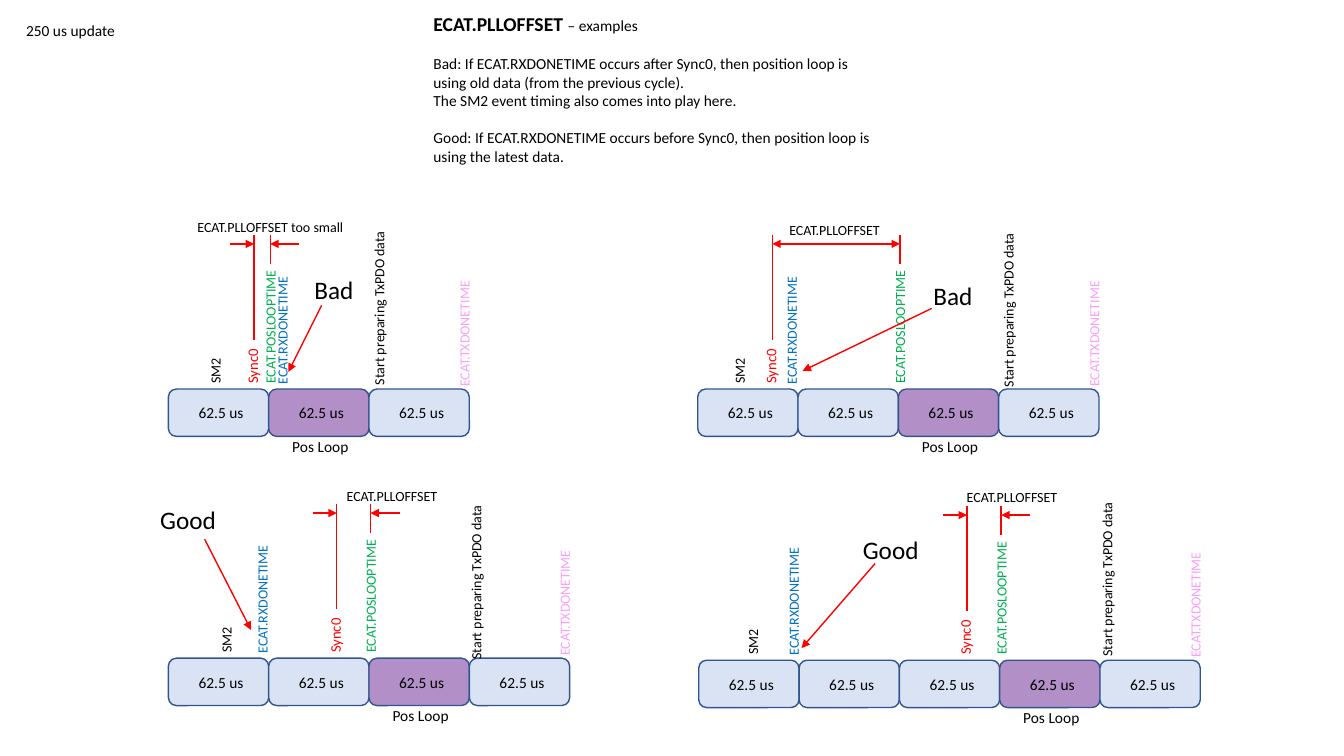
import pptx
import pptx.dml.color
import pptx.enum.shapes
import pptx.enum.text
import pptx.oxml.ns
import pptx.util
from lxml import etree

Inches = pptx.util.Inches
Points = pptx.util.Pt

FONT = "Calibri"
BLACK, RED, GREEN, BLUE, PINK = "000000", "FF0000", "00B050", "0070C0", "FAA0FA"
CELL_FILL, LOOP_FILL, CELL_LINE = "DAE3F3", "B28FC7", "325491"
PITCH, CELL_HEIGHT = 0.995, 0.47


def color(value):
    return pptx.dml.color.RGBColor.from_string(value)


def write(para, text, size=11, ink=BLACK, bold=False):
    span = para.add_run()
    span.text = text
    span.font.name = FONT
    span.font.size = Points(size)
    span.font.bold = bold
    span.font.color.rgb = color(ink)


class TimingPage:
    def __init__(self, deck):
        self.shapes = deck.slides.add_slide(deck.slide_layouts[6]).shapes

    def text_box(self, left, top, width, height):
        box = self.shapes.add_textbox(Inches(left), Inches(top), Inches(width), Inches(height))
        box.text_frame.word_wrap = True
        box.text_frame.auto_size = pptx.enum.text.MSO_AUTO_SIZE.SHAPE_TO_FIT_TEXT
        return box

    def label(self, text, left, top, width, height=0.27, **style):
        box = self.text_box(left, top, width, height)
        write(box.text_frame.paragraphs[0], text, **style)
        return box

    def upright_label(self, text, center_x, center_y, length, height=0.27, **style):
        """Place a label that reads from bottom to top around a centre."""
        left, top = center_x - length / 2, center_y - height / 2
        self.label(text, left, top, length, height, **style).rotation = 270

    def cell(self, left, top, fill):
        box = self.shapes.add_shape(pptx.enum.shapes.MSO_SHAPE.ROUNDED_RECTANGLE,
                                    Inches(left), Inches(top), Inches(PITCH), Inches(CELL_HEIGHT))
        box.shadow.inherit = False
        box.fill.solid()
        box.fill.fore_color.rgb = color(fill)
        box.line.color.rgb = color(CELL_LINE)
        box.line.width = Points(1)
        frame = box.text_frame
        frame.margin_left, frame.margin_right = Inches(0.05), Inches(0)
        frame.vertical_anchor = pptx.enum.text.MSO_ANCHOR.MIDDLE
        para = frame.paragraphs[0]
        para.alignment = pptx.enum.text.PP_ALIGN.CENTER
        write(para, "62.5 us")

    def line(self, start, end, heads=()):
        """Draw a red line; heads lists headEnd (at start) and tailEnd (at end)."""
        connector = self.shapes.add_connector(pptx.enum.shapes.MSO_CONNECTOR.STRAIGHT,
                                              *map(Inches, (*start, *end)))
        connector.line.color.rgb = color(RED)
        connector.line.width = Points(1)
        for head in heads:
            etree.SubElement(connector.line._get_or_add_ln(),
                             pptx.oxml.ns.qn("a:" + head), type="triangle")
        etree.SubElement(connector._element.spPr, pptx.oxml.ns.qn("a:effectLst"))

    def arrow(self, start, end):
        self.line(start, end, ["tailEnd"])

    def offset_marks(self, sync, loop, top, spread):
        """Mark the distance from Sync0 to the position loop."""
        self.line((sync, top - 1.53), (sync, top - 0.49))
        self.line((loop, top - 1.53), (loop, top - 1.24))
        level = top - 1.44
        if spread:
            self.line((sync, level), (loop, level), ["headEnd", "tailEnd"])
        else:
            self.arrow((sync - 0.24, level), (sync, level))
            self.arrow((loop + 0.29, level), (loop, level))

    def timeline(self, left, top, cells, loop, sm2, sync, rx, prepare, offset, verdict,
                 pointer, spread=False):
        for index in range(cells):
            self.cell(left + index * PITCH, top, LOOP_FILL if index == loop else CELL_FILL)
        loop_left = left + loop * PITCH
        pos = loop_left + 0.015
        self.label("Pos Loop", loop_left + 0.135, top + 0.43, 0.88, 0.29)
        self.upright_label("SM2", sm2, top - 0.4, 0.89, 0.28, size=10)
        self.upright_label("Sync0", sync, top - 0.24, 0.57, 0.29, size=10.5, ink=RED)
        self.upright_label("ECAT.POSLOOPTIME", pos, top - 0.655, 1.4, size=10, ink=GREEN)
        self.upright_label("ECAT.RXDONETIME", rx, top - 0.605, 1.31, size=10, ink=BLUE)
        self.upright_label("ECAT.TXDONETIME", left + cells * PITCH - 0.05, top - 0.58, 1.31,
                           size=10, ink=PINK)
        self.upright_label("Start preparing TxPDO data", *prepare, 1.82, size=10)
        self.offset_marks(sync + 0.01, pos, top, spread)
        self.label(*offset, size=10)
        self.label(*verdict, 0.4, size=18)
        self.arrow(*pointer)

    def heading(self):
        frame = self.text_box(4.2, 0.07, 4.65, 1.63).text_frame
        write(frame.paragraphs[0], "ECAT.PLLOFFSET ", size=14, bold=True)
        write(frame.paragraphs[0], "– examples")
        for text, gap in (
            ("Bad: If ECAT.RXDONETIME occurs after Sync0, then position loop is "
             "using old data (from the previous cycle).", 13.4),
            ("The SM2 event timing also comes into play here.", 0),
            ("Good: If ECAT.RXDONETIME occurs before Sync0, then position loop is "
             "using the latest data.", 13.4),
        ):
            para = frame.add_paragraph()
            para.space_before = Points(gap)
            write(para, text)


def main():
    deck = pptx.Presentation()
    deck.slide_width, deck.slide_height = Inches(13.33), Inches(7.5)
    page = TimingPage(deck)
    page.label("250 us update", 0.16, 0.16, 1.14, 0.29)
    page.heading()
    page.timeline(1.67, 3.86, cells=3, loop=1, sm2=2.14, sync=2.51, rx=2.8,
                  prepare=(3.76, 3.01), offset=("ECAT.PLLOFFSET too small", 1.86, 2.12, 1.69),
                  verdict=("Bad", 3.02, 2.67, 0.62), pointer=((3.19, 3.03), (2.86, 3.69)))
    page.timeline(6.92, 3.86, cells=4, loop=2, sm2=7.34, sync=7.65, rx=7.85,
                  prepare=(10, 3.03), offset=("ECAT.PLLOFFSET", 7.73, 2.15, 1.2),
                  verdict=("Bad", 9.16, 2.73, 0.64), pointer=((9.24, 3.06), (7.96, 3.68)),
                  spread=True)
    page.timeline(1.67, 6.53, cells=4, loop=2, sm2=2.25, sync=3.33, rx=2.6,
                  prepare=(4.72, 5.73), offset=("ECAT.PLLOFFSET", 3.34, 4.79, 1.2),
                  verdict=("Good", 1.49, 4.95, 0.77), pointer=((2.03, 5.35), (2.49, 6.25)))
    page.timeline(6.93, 6.55, cells=5, loop=3, sm2=7.47, sync=9.58, rx=7.87,
                  prepare=(10.98, 5.7), offset=("ECAT.PLLOFFSET", 9.49, 4.8, 1.2),
                  verdict=("Good", 8.46, 5.25, 0.77), pointer=((8.68, 5.59), (7.95, 6.43)))
    deck.save("out.pptx")


if __name__ == "__main__":
    main()
